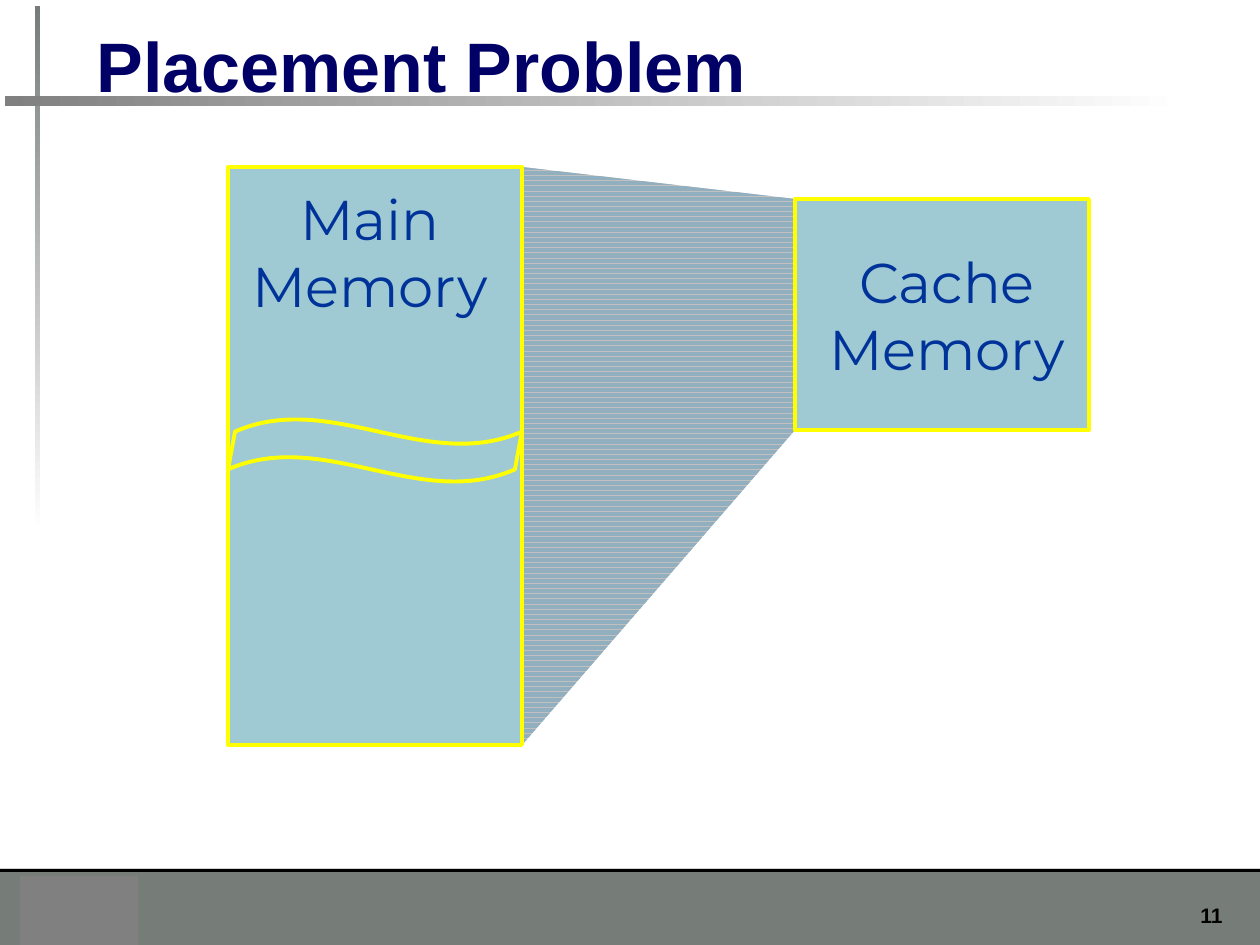
from pptx import Presentation
from pptx.dml.color import RGBColor
from pptx.enum.dml import MSO_PATTERN
from pptx.enum.shapes import MSO_SHAPE
from pptx.enum.text import MSO_ANCHOR, PP_ALIGN
from pptx.util import Emu, Pt

RECT, WAVE = MSO_SHAPE.RECTANGLE, MSO_SHAPE.WAVE
STRIPES = MSO_PATTERN.DARK_HORIZONTAL
TOP, BOTTOM = MSO_ANCHOR.TOP, MSO_ANCHOR.BOTTOM
LEFT, CENTER, RIGHT = PP_ALIGN.LEFT, PP_ALIGN.CENTER, PP_ALIGN.RIGHT

BLACK = RGBColor(0x00, 0x00, 0x00)
WHITE = RGBColor(0xFF, 0xFF, 0xFF)
GRAY = RGBColor(0x80, 0x80, 0x80)
SLATE = RGBColor(0x76, 0x7D, 0x79)
SILVER = RGBColor(0xC0, 0xC0, 0xC0)
NAVY = RGBColor(0x00, 0x00, 0x66)
BLUE = RGBColor(0x00, 0x33, 0x99)
AQUA = RGBColor(0x9F, 0xCA, 0xD3)
STEEL = RGBColor(0x91, 0xAF, 0xBF)
YELLOW = RGBColor(0xFF, 0xFF, 0x00)

WIDE, HIGH = 1260, 945  # slide size in px


def px(n):
    return Emu(round(n * 914400 / 126))


def add_box(slide, x, y, w, h, fill=None, line=None, kind=RECT):
    shape = slide.shapes.add_shape(kind, px(x), px(y), px(w), px(h))
    shape.shadow.inherit = False
    if fill is not None:
        shape.fill.solid()
        shape.fill.fore_color.rgb = fill
    if line is None:
        shape.line.fill.background()
    else:
        shape.line.color.rgb = line
        shape.line.width = Pt(2.25)
    return shape


def add_fade(slide, x, y, w, h, color, angle):
    fill = add_box(slide, x, y, w, h).fill
    fill.gradient()
    fill.gradient_angle = angle
    for stop, shade in zip(fill.gradient_stops, (color, WHITE)):
        stop.color.rgb = shade


def set_text(shape, text, size=32, font="Montserrat", color=BLUE,
             bold=False, align=CENTER, anchor=TOP):
    frame = shape.text_frame
    frame.word_wrap = True
    frame.vertical_anchor = anchor
    frame.text = text
    para = frame.paragraphs[0]
    para.alignment = align
    style = para.runs[0].font
    style.size, style.name, style.bold = Pt(size), font, bold
    style.color.rgb = color


def add_text(slide, x, y, w, h, text, **style):
    box = slide.shapes.add_textbox(px(x), px(y), px(w), px(h))
    set_text(box, text, **style)


def add_footer(slide, x, y, w, h):
    add_box(slide, x, y, w, h, SLATE)
    add_box(slide, x, y, w, 3, BLACK)
    add_box(slide, x + 20, y + 7, 118, h - 7, GRAY)
    add_text(slide, x + w - 105, y + 27, 80, 38, "11", size=12, font="Arial",
             color=BLACK, bold=True, align=RIGHT)


def add_header(slide, x, y, w, h):
    # Crossed fading rules
    add_fade(slide, x + 30, y, 5, 525, SLATE, 270)
    add_fade(slide, x, y + 90, 1181, 10, GRAY, 0)
    # Title
    title = slide.shapes.title
    title.left, title.top = px(x + 79), px(y + 10)
    title.width, title.height = px(w - 79), px(h - 10)
    set_text(title, "Placement Problem", size=40, font="Arial", color=NAVY,
             bold=True, align=LEFT, anchor=BOTTOM)


def add_funnel(slide, main, cache):
    """Striped link from the right side of main to the left side of cache."""
    x, y, w, h = main
    left, top, _, tall = cache
    start = x + w
    path = slide.shapes.build_freeform(px(start), px(y))
    ends = [(left, top), (left, top + tall), (start, y + h)]
    path.add_line_segments([(px(a), px(b)) for a, b in ends], close=True)
    shape = path.convert_to_shape()
    shape.shadow.inherit = False
    shape.line.fill.background()
    shape.fill.patterned()
    shape.fill.pattern = STRIPES
    shape.fill.fore_color.rgb = STEEL
    shape.fill.back_color.rgb = SILVER


def add_main(slide, x, y, w, h):
    add_box(slide, x, y, w, h, AQUA, YELLOW)
    add_text(slide, x, y + 11, 284, 63, "Main Memory")
    # Break mark
    wave = add_box(slide, x, y + 252, w, 63, AQUA, YELLOW, WAVE)
    wave.adjustments[0] = 0.206
    wave.adjustments[1] = -0.012


def add_cache(slide, x, y, w, h):
    add_box(slide, x, y, w, h, AQUA, YELLOW)
    add_text(slide, x + 10, y + 42, 284, 113, "Cache Memory")


def main():
    deck = Presentation()
    deck.slide_width, deck.slide_height = px(WIDE), px(HIGH)
    slide = deck.slides.add_slide(deck.slide_layouts[5])
    store, cache = (228, 167, 294, 578), (795, 199, 294, 231)
    add_footer(slide, 0, 869, WIDE, HIGH - 869)
    add_header(slide, 5, 6, 1221, 107)
    add_funnel(slide, store, cache)
    add_main(slide, *store)
    add_cache(slide, *cache)
    deck.save("out.pptx")


if __name__ == "__main__":
    main()
